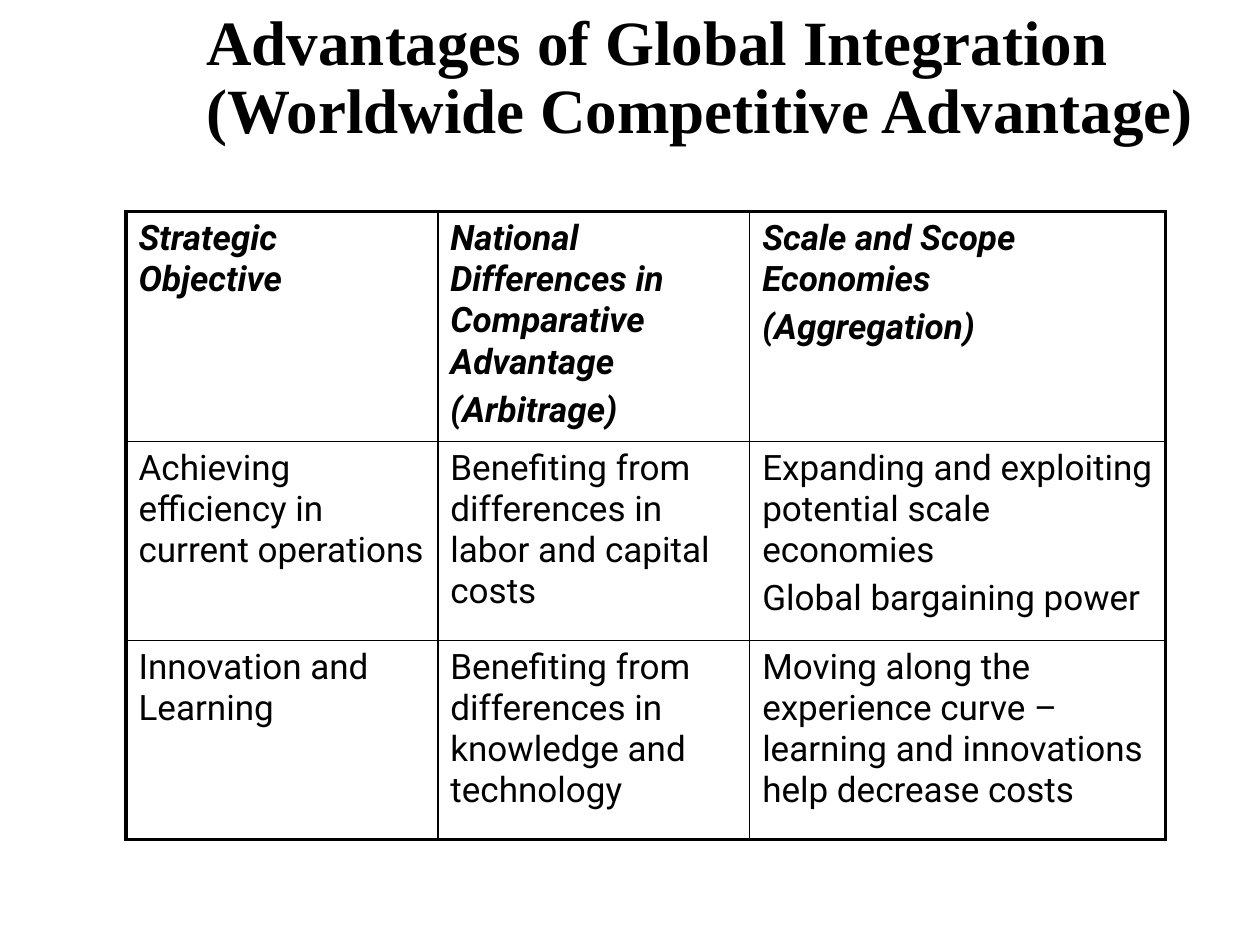
import dataclasses

import lxml.etree
import pptx
import pptx.dml.color
import pptx.enum.text
import pptx.oxml.ns
import pptx.util


@dataclasses.dataclass(frozen=True)
class Theme:
    ink: str = "000000"
    title_font: str = "Times New Roman"
    table_font: str = "Roboto"
    title_size: float = 36
    table_size: float = 20
    paragraph_gap: float = 4
    outer_line: float = 2.25
    inner_line: float = 1


THEME = Theme()
SLIDE_WIDTH, SLIDE_HEIGHT = 10, 7.5
COLUMN_SHARES = (0.3, 0.3, 0.4)
ROW_HEIGHT = 1.58

TITLE = "Advantages of Global Integration (Worldwide Competitive Advantage)"
# Each cell is a list of paragraphs
ROWS = [
    [
        ["Strategic Objective"],
        ["National Differences in Comparative Advantage", "(Arbitrage)"],
        ["Scale and Scope Economies", "(Aggregation)"],
    ],
    [
        ["Achieving efficiency in current operations"],
        ["Benefiting from differences in labor and capital costs"],
        ["Expanding and exploiting potential scale economies", "Global bargaining power"],
    ],
    [
        ["Innovation and Learning"],
        ["Benefiting from differences in knowledge and technology"],
        ["Moving along the experience curve – learning and innovations help decrease costs"],
    ],
]


def write_text(frame, paragraphs, *, font, size, bold=False, italic=False,
               line_spacing=None, gap=0):
    frame.word_wrap = True
    for index, text in enumerate(paragraphs):
        paragraph = frame.add_paragraph() if index else frame.paragraphs[0]
        paragraph.line_spacing = line_spacing
        paragraph.space_before = pptx.util.Pt(gap if index else 0)
        run = paragraph.add_run()
        run.text = text
        run.font.name = font
        run.font.size = pptx.util.Pt(size)
        run.font.bold = bold
        run.font.italic = italic
        run.font.color.rgb = pptx.dml.color.RGBColor.from_string(THEME.ink)


def add_title(slide):
    shape = slide.shapes.add_textbox(
        pptx.util.Inches(1.54), 0, pptx.util.Inches(8.25), pptx.util.Inches(1.25))
    shape.text_frame.vertical_anchor = pptx.enum.text.MSO_ANCHOR.MIDDLE
    write_text(shape.text_frame, [TITLE], font=THEME.title_font,
               size=THEME.title_size, bold=True, line_spacing=0.9)


def set_border(cell, side, width):
    qn = pptx.oxml.ns.qn
    properties = cell._tc.get_or_add_tcPr()
    line = lxml.etree.SubElement(
        properties, qn(f"a:ln{side}"), w=str(pptx.util.Pt(width)))
    fill = lxml.etree.SubElement(line, qn("a:solidFill"))
    lxml.etree.SubElement(fill, qn("a:srgbClr"), val=THEME.ink)


def add_objectives_table(slide, left, top, width):
    row_count, column_count = len(ROWS), len(COLUMN_SHARES)
    table = slide.shapes.add_table(
        row_count, column_count, pptx.util.Inches(left), pptx.util.Inches(top),
        pptx.util.Inches(width), pptx.util.Inches(ROW_HEIGHT * row_count)).table
    table.horz_banding = False
    table.first_row = False
    for column, share in zip(table.columns, COLUMN_SHARES):
        column.width = pptx.util.Inches(width * share)

    for row_index, row in enumerate(ROWS):
        table.rows[row_index].height = pptx.util.Inches(ROW_HEIGHT)
        for column_index, paragraphs in enumerate(row):
            cell = table.cell(row_index, column_index)
            # Heavy frame outside, thin rules inside
            outer_sides = {
                "L": column_index == 0,
                "R": column_index == column_count - 1,
                "T": row_index == 0,
                "B": row_index == row_count - 1,
            }
            for side, is_outer in outer_sides.items():
                set_border(cell, side, THEME.outer_line if is_outer else THEME.inner_line)
            cell.fill.background()
            is_header = row_index == 0
            write_text(cell.text_frame, paragraphs, font=THEME.table_font,
                       size=THEME.table_size, bold=is_header, italic=is_header,
                       gap=THEME.paragraph_gap)


def main():
    presentation = pptx.Presentation()
    presentation.slide_width = pptx.util.Inches(SLIDE_WIDTH)
    presentation.slide_height = pptx.util.Inches(SLIDE_HEIGHT)
    slide = presentation.slides.add_slide(presentation.slide_layouts[6])
    add_title(slide)
    add_objectives_table(slide, left=1, top=1.68, width=8.25)
    presentation.save("out.pptx")


if __name__ == "__main__":
    main()
